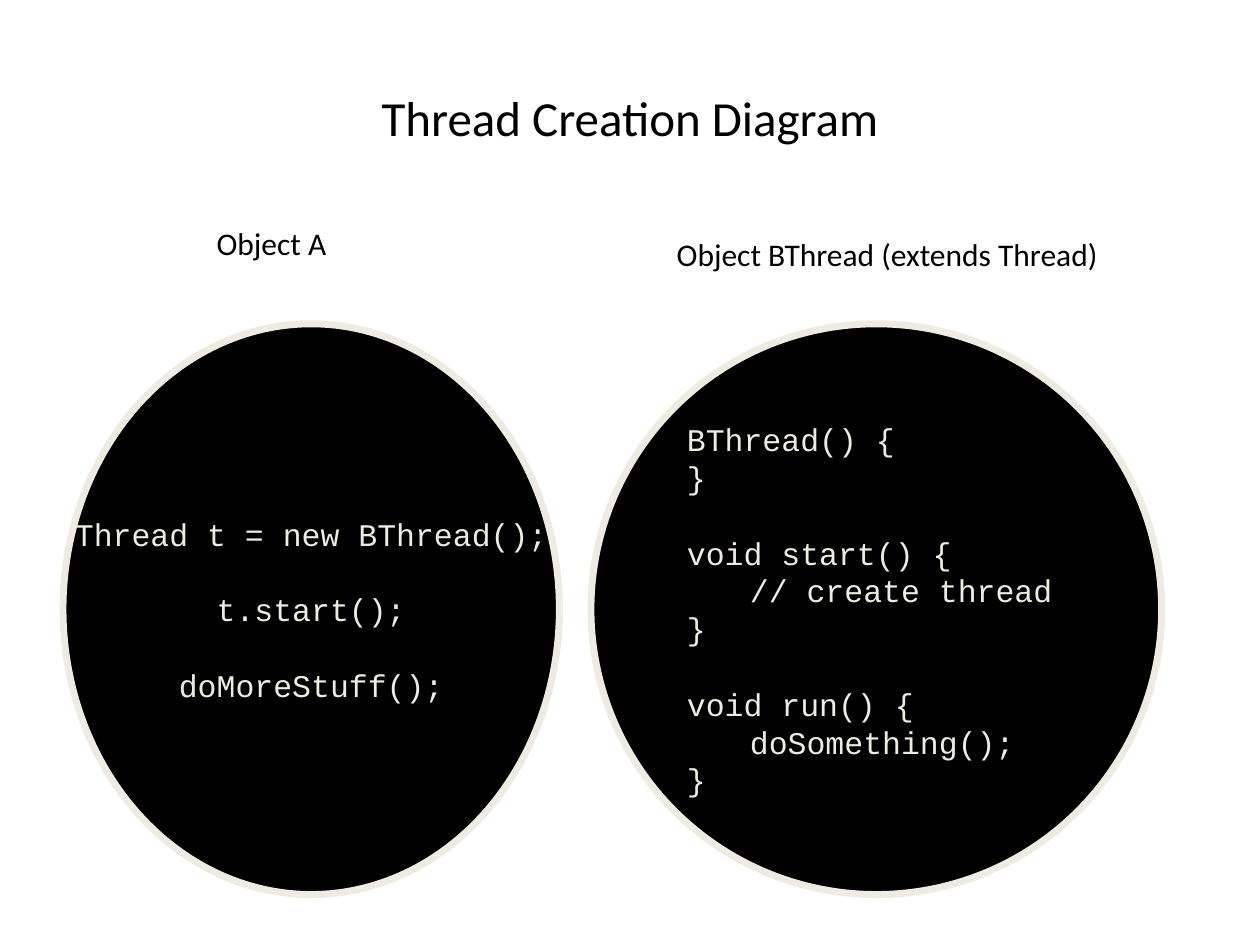
from pptx import Presentation
from pptx.dml.color import RGBColor
from pptx.enum.shapes import MSO_SHAPE
from pptx.enum.text import MSO_ANCHOR, PP_ALIGN
from pptx.util import Inches, Pt

BLACK = RGBColor(0x00, 0x00, 0x00)
CREAM = RGBColor(0xEE, 0xEC, 0xE1)
OVAL = MSO_SHAPE.OVAL
MIDDLE, TOP = MSO_ANCHOR.MIDDLE, MSO_ANCHOR.TOP
LEFT, CENTER = PP_ALIGN.LEFT, PP_ALIGN.CENTER
LINE_PITCH = Pt(21.6)
OVAL_TOP, OVAL_HEIGHT = 2.57, 4.53

CALLER_CODE = [["Thread t = new BThread();"], ["t.start();"], ["doMoreStuff();"]]
THREAD_CODE = [
    ["BThread() {", "}"],
    ["void start() {", "\t// create thread", "}"],
    ["void run() {", "\tdoSomething();", "}"],
]


class ThreadDiagram:
    """Draws headings and code-filled ovals on one slide."""

    def __init__(self, slide):
        self.slide = slide

    def heading(self, text, left, top, width, height, size=18, anchor=TOP):
        box = self.slide.shapes.add_textbox(
            Inches(left), Inches(top), Inches(width), Inches(height))
        frame = box.text_frame
        frame.word_wrap = True
        frame.vertical_anchor = anchor
        paragraph = frame.paragraphs[0]
        paragraph.text = text
        paragraph.alignment = CENTER
        self.style(paragraph.font, "Calibri", size, BLACK)

    def code_oval(self, blocks, left, width, alignment):
        oval = self.slide.shapes.add_shape(
            OVAL, Inches(left), Inches(OVAL_TOP), Inches(width), Inches(OVAL_HEIGHT))
        oval.shadow.inherit = False
        oval.fill.solid()
        oval.fill.fore_color.rgb = BLACK
        oval.line.color.rgb = CREAM
        oval.line.width = Pt(4)
        frame = oval.text_frame
        frame.word_wrap = False
        frame.vertical_anchor = MIDDLE
        for block_index, block in enumerate(blocks):
            for line_index, code in enumerate(block):
                first = block_index == line_index == 0
                paragraph = frame.paragraphs[0] if first else frame.add_paragraph()
                paragraph.text = code.lstrip("\t")
                paragraph.alignment = alignment
                paragraph.line_spacing = LINE_PITCH
                if block_index and line_index == 0:
                    paragraph.space_before = LINE_PITCH
                if code.startswith("\t"):
                    properties = paragraph._p.get_or_add_pPr()
                    properties.set("marL", str(Inches(0.5)))
                    properties.set("indent", "0")
                self.style(paragraph.font, "Courier New", 18, CREAM)

    def style(self, font, name, size, color):
        font.name = name
        font.size = Pt(size)
        font.color.rgb = color


def main():
    presentation = Presentation()
    presentation.slide_width = Inches(10)
    presentation.slide_height = Inches(7.5)
    diagram = ThreadDiagram(
        presentation.slides.add_slide(presentation.slide_layouts[6]))

    diagram.heading("Thread Creation Diagram", 0.5, 0.3, 9, 1.25, 28, MIDDLE)
    diagram.code_oval(CALLER_CODE, 0.5, 3.94, CENTER)
    diagram.heading("Object A", 1.45, 1.73, 1.41, 0.5)
    diagram.code_oval(THREAD_CODE, 4.69, 4.53, LEFT)
    diagram.heading("Object BThread (extends Thread) ", 4.44, 1.82, 5.26, 0.5)
    presentation.save("out.pptx")


if __name__ == "__main__":
    main()
